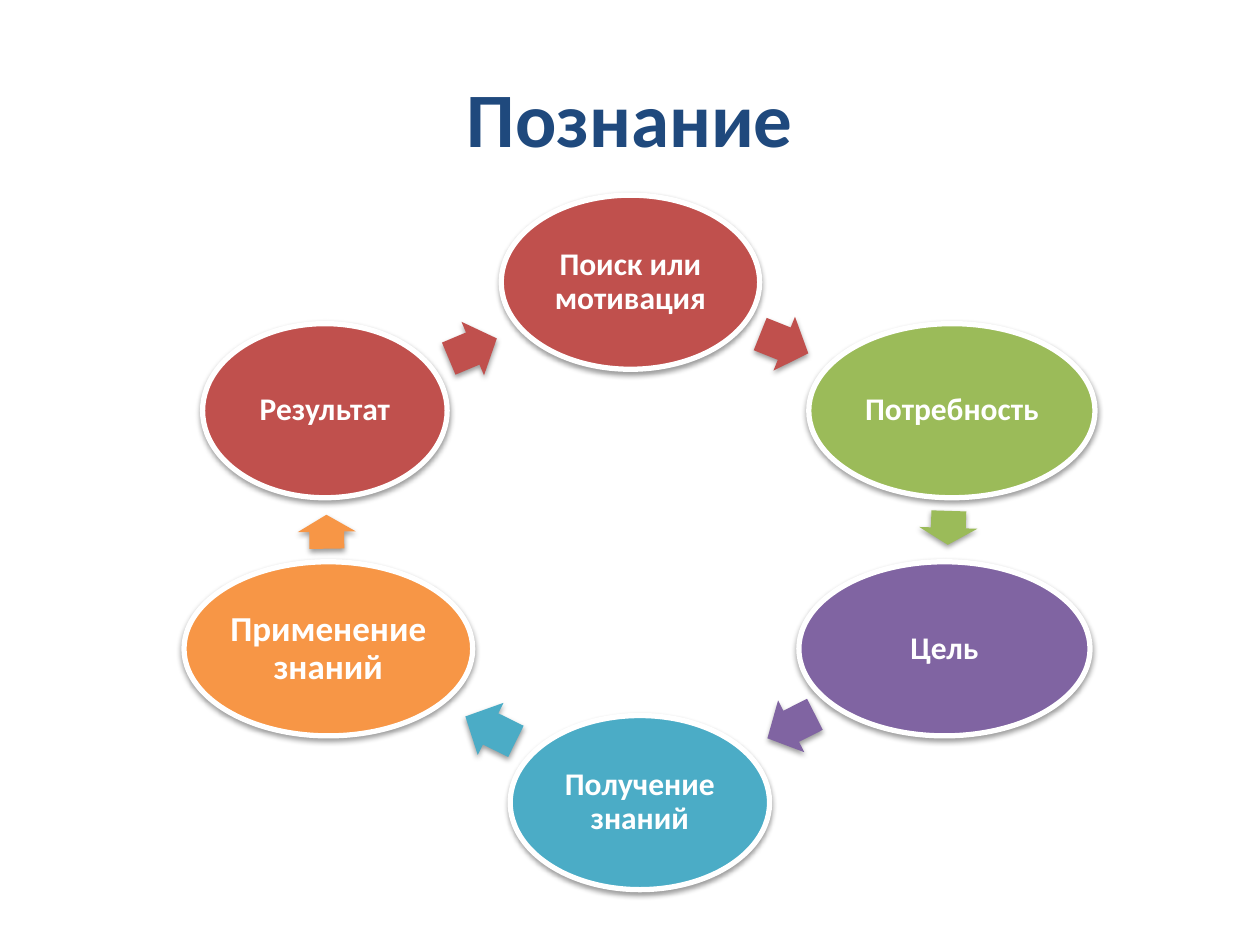
from math import atan2, cos, degrees, hypot, sin
from lxml.etree import SubElement as Sub
from pptx import Presentation
from pptx.dml.color import RGBColor as RGB
from pptx.enum.shapes import MSO_SHAPE as Kind
from pptx.enum.text import MSO_ANCHOR as Anchor, PP_ALIGN as Align
from pptx.oxml.ns import qn
from pptx.util import Cm, Pt

TITLE = "Познание"
# Steps, clockwise: text, centre x, centre y, width (cm), colour, type size
STEPS = [
    ("Поиск или мотивация", 12.71, 5.69, 5.21, "red", "body"),
    ("Потребность", 19.19, 8.28, 5.77, "green", "body"),
    ("Цель", 19.04, 13.08, 5.87, "purple", "body"),
    ("Получение знаний", 12.9, 16.18, 5.23, "teal", "body"),
    ("Применение знаний", 6.62, 13.08, 5.82, "orange", "large"),
    ("Результат", 6.55, 8.28, 4.93, "red", "body"),
]
THEME = {
    "font": "Calibri", "title": 44, "body": 18, "large": 20,
    "navy": "1F497D", "white": "FFFFFF", "red": "C0504D", "green": "9BBB59",
    "purple": "8064A2", "teal": "4BACC6", "orange": "F79646",
}
OVAL_H, ARROW_H = 3.51, 1.17
# Arrow length and centre, as shares of the gap between two ovals
SHARE, MID = 0.53, 0.47


def tint(name):
    return RGB.from_string(THEME[name])


def write(shape, text, size="body", color="white", pad=0.08, lead=0.9):
    frame = shape.text_frame
    frame.word_wrap = True
    frame.vertical_anchor = Anchor.MIDDLE
    frame.margin_left = frame.margin_right = Cm(pad)
    frame.margin_top = frame.margin_bottom = Cm(pad)
    para = frame.paragraphs[0]
    para.alignment, para.line_spacing = Align.CENTER, lead
    run = para.add_run()
    run.text = text
    font = run.font
    font.name, font.size, font.bold = THEME["font"], Pt(THEME[size]), True
    font.color.rgb = tint(color)


def draw(kind, x, y, w, h, color, edge=None):
    """Add a filled shape with a soft shadow, centred on x, y."""
    shape = slide.shapes.add_shape(
        kind, Cm(x - w / 2), Cm(y - h / 2), Cm(w), Cm(h))
    shape.fill.solid()
    shape.fill.fore_color.rgb = tint(color)
    if edge:
        shape.line.color.rgb = tint(edge)
        shape.line.width = Pt(3)
    else:
        shape.line.fill.background()
    shape.shadow.inherit = False
    cast = Sub(shape._element.spPr.find(qn("a:effectLst")), qn("a:outerShdw"),
               blurRad=str(Pt(3.1)), dist=str(Pt(1.6)), dir="5400000",
               rotWithShape="0")
    Sub(Sub(cast, qn("a:srgbClr"), val="000000"), qn("a:alpha"), val="38000")
    return shape


def reach(width, turn):
    """Distance from an oval's centre to its rim in one direction."""
    return 1 / hypot(cos(turn) / (width / 2), sin(turn) / (OVAL_H / 2))


deck = Presentation()
deck.slide_width, deck.slide_height = Cm(25.4), Cm(19.05)
slide = deck.slides.add_slide(deck.slide_layouts[6])

# Title
head = slide.shapes.add_textbox(Cm(1.27), Cm(0.76), Cm(22.86), Cm(3.18))
write(head, TITLE, size="title", color="navy", pad=0.13, lead=1)

# Cycle: each oval, then the arrow to the next one
for step, after in zip(STEPS, STEPS[1:] + STEPS[:1]):
    text, x, y, w, color, size = step
    oval = draw(Kind.OVAL, x, y, w, OVAL_H, color, edge="white")
    write(oval, text, size=size)

    dx, dy = after[1] - x, after[2] - y
    turn = atan2(dy, dx)
    start = reach(w, turn)
    gap = hypot(dx, dy) - start - reach(after[3], turn)
    far = start + MID * gap
    arrow = draw(Kind.RIGHT_ARROW, x + far * cos(turn), y + far * sin(turn),
                 SHARE * gap, ARROW_H, color)
    arrow.adjustments[0], arrow.adjustments[1] = 0.6, 0.5
    arrow.rotation = degrees(turn) % 360

deck.save("out.pptx")
